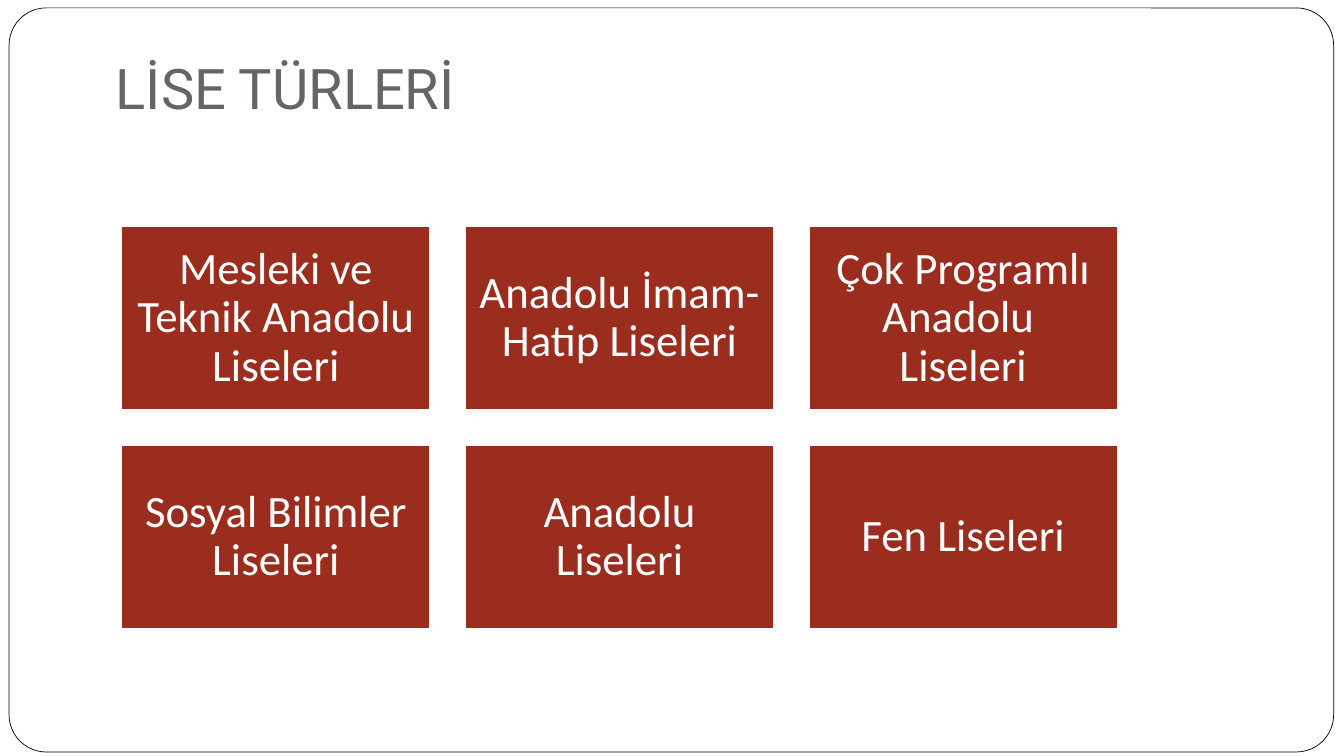
from pptx import Presentation
from pptx.dml.color import RGBColor
from pptx.enum.shapes import MSO_SHAPE as SHAPE
from pptx.enum.text import MSO_ANCHOR as ANCHOR, PP_ALIGN as ALIGN
from pptx.util import Cm, Pt

COLORS = {"white": "FFFFFF", "black": "000000", "brick": "9B2D1F", "gray": "696464"}
SCHOOL_TYPES = [
    "Mesleki ve Teknik Anadolu Liseleri",
    "Anadolu İmam-Hatip Liseleri",
    "Çok Programlı Anadolu  Liseleri",
    "Sosyal Bilimler Liseleri",
    "Anadolu Liseleri",
    "Fen Liseleri",
]
COLUMNS = 3
GRID_LEFT, GRID_TOP = 3.02, 5.66
CARD_WIDTH, CARD_HEIGHT, GAP = 7.87, 4.72, 0.79


def add_panel(kind, left, top, width, height, fill, line, line_width):
    """Add a filled, outlined shape without a shadow; lengths in cm."""
    panel = slide.shapes.add_shape(kind, Cm(left), Cm(top), Cm(width), Cm(height))
    panel.shadow.inherit = False
    panel.fill.solid()
    panel.fill.fore_color.rgb = RGBColor.from_string(COLORS[fill])
    panel.line.color.rgb = RGBColor.from_string(COLORS[line])
    panel.line.width = Pt(line_width)
    return panel


def write_text(shape, text, anchor, align, font, size, color, insets):
    """Set and format one paragraph; insets are left, top, right, bottom in cm."""
    frame = shape.text_frame
    frame.text = text
    frame.word_wrap = True
    frame.vertical_anchor = anchor
    frame.margin_left, frame.margin_top, frame.margin_right, frame.margin_bottom = map(Cm, insets)
    paragraph = frame.paragraphs[0]
    paragraph.alignment = align
    paragraph.line_spacing = 0.9 if align == ALIGN.CENTER else 1.0
    run_font = paragraph.runs[0].font
    run_font.name = font
    run_font.size = Pt(size)
    run_font.color.rgb = RGBColor.from_string(COLORS[color])


prs = Presentation()
prs.slide_width, prs.slide_height = Cm(33.87), Cm(19.05)
slide = prs.slides.add_slide(prs.slide_layouts[5])

title = slide.shapes.title
title.left, title.top, title.width, title.height = Cm(2.67), Cm(0.23), Cm(27.74), Cm(3.05)
write_text(title, "LİSE TÜRLERİ", ANCHOR.BOTTOM, ALIGN.LEFT, "Roboto", 40, "gray",
           (0.25, 0.13, 0.25, 0.25))

# The rounded border lies behind the title
border = add_panel(SHAPE.ROUNDED_RECTANGLE, 0.23, 0.2, 33.38, 18.75, "white", "black", 0.5)
border.adjustments[0] = 0.05
title.element.addprevious(border.element)

for index, school_type in enumerate(SCHOOL_TYPES):
    row, column = divmod(index, COLUMNS)
    card = add_panel(SHAPE.RECTANGLE,
                     GRID_LEFT + column * (CARD_WIDTH + GAP),
                     GRID_TOP + row * (CARD_HEIGHT + GAP),
                     CARD_WIDTH, CARD_HEIGHT, "brick", "white", 3.78)
    write_text(card, school_type, ANCHOR.MIDDLE, ALIGN.CENTER, "Calibri", 32, "white",
               (0.33, 0.33, 0.33, 0.33))

prs.save("out.pptx")
